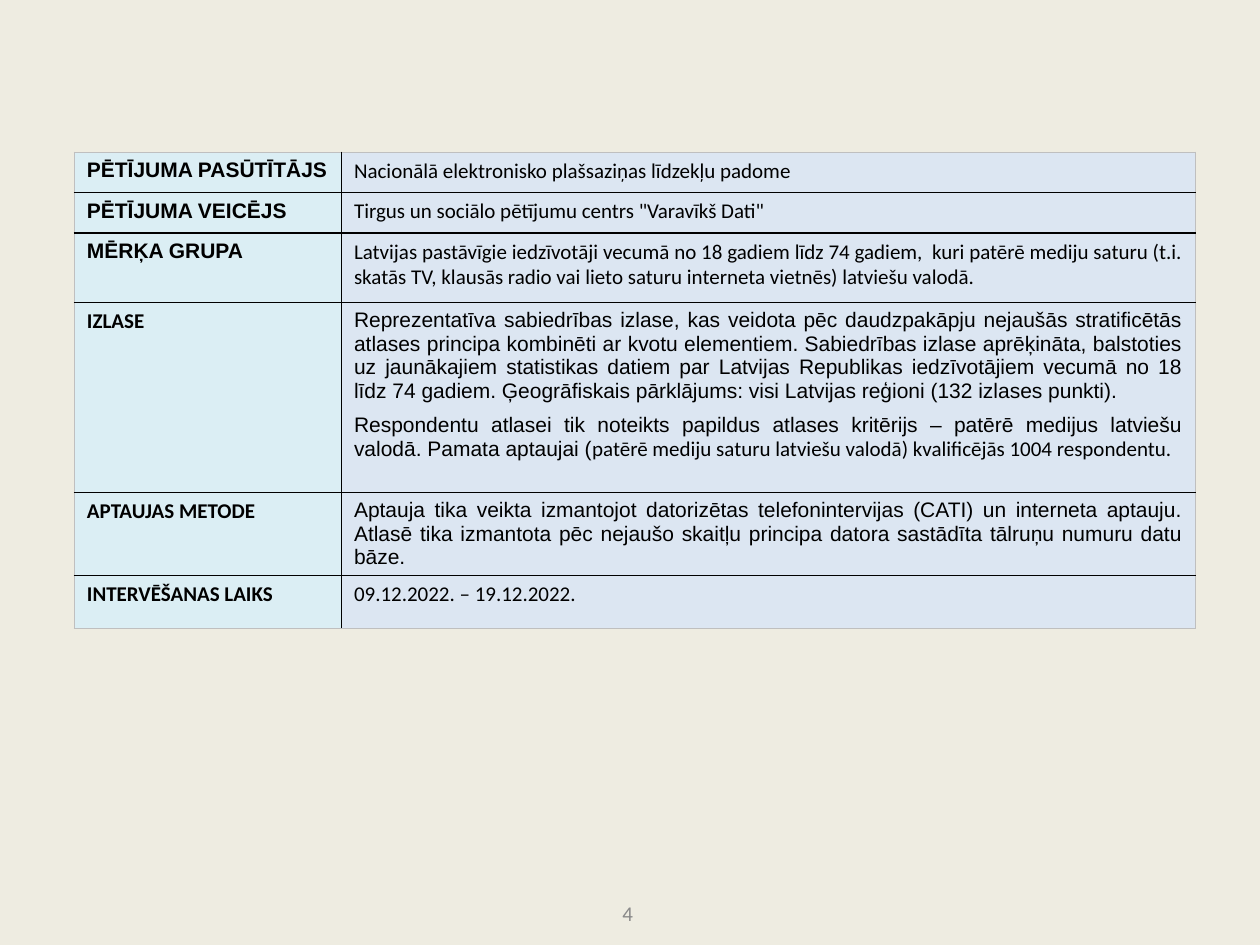
from lxml import etree
from pptx import Presentation
from pptx.dml.color import RGBColor
from pptx.enum.text import PP_ALIGN
from pptx.oxml.ns import qn
from pptx.util import Inches, Pt

LEFT, JUSTIFY = PP_ALIGN.LEFT, PP_ALIGN.JUSTIFY
BACKGROUND = RGBColor(0xEE, 0xEC, 0xE1)
LABEL_FILL = RGBColor(0xDB, 0xEE, 0xF4)
DETAIL_FILL = RGBColor(0xDC, 0xE6, 0xF2)
BLACK = RGBColor(0x00, 0x00, 0x00)
GREY = RGBColor(0x89, 0x89, 0x89)
FRAME = RGBColor(0xBF, 0xBF, 0xBF)
ARIAL, CALIBRI = "Arial", "Calibri"

# Each row: height, label, label font, detail alignment, paragraphs of (text, font) runs
ROWS = [
    (0.32, "PĒTĪJUMA PASŪTĪTĀJS", ARIAL, JUSTIFY,
     [[("Nacionālā elektronisko plašsaziņas līdzekļu padome", CALIBRI)]]),
    (0.32, "PĒTĪJUMA VEICĒJS", ARIAL, JUSTIFY,
     [[('Tirgus un sociālo pētījumu centrs "Varavīkš Dati"', CALIBRI)]]),
    (0.55, "MĒRĶA GRUPA", ARIAL, JUSTIFY,
     [[("Latvijas pastāvīgie iedzīvotāji vecumā no 18 gadiem līdz 74 gadiem,  kuri patērē "
        "mediju saturu (t.i. skatās TV, klausās radio vai lieto saturu interneta vietnēs) "
        "latviešu valodā.", CALIBRI)]]),
    (1.51, "IZLASE", CALIBRI, JUSTIFY,
     [[("Reprezentatīva sabiedrības izlase, kas veidota pēc daudzpakāpju nejaušās "
        "stratificētās atlases principa kombinēti ar kvotu elementiem. Sabiedrības izlase "
        "aprēķināta, balstoties uz jaunākajiem statistikas datiem par Latvijas Republikas "
        "iedzīvotājiem vecumā no 18 līdz 74 gadiem. Ģeogrāfiskais pārklājums: visi Latvijas "
        "reģioni (132 izlases punkti).", ARIAL)],
      [("Respondentu atlasei tik noteikts papildus atlases kritērijs – patērē medijus "
        "latviešu valodā. Pamata aptaujai (", ARIAL),
       ("patērē mediju saturu latviešu valodā) kvalificējās 1004 respondentu.", CALIBRI)]]),
    (0.66, "APTAUJAS METODE", CALIBRI, JUSTIFY,
     [[("Aptauja tika veikta izmantojot datorizētas telefonintervijas (CATI) un interneta "
        "aptauju. Atlasē tika izmantota pēc nejaušo skaitļu principa datora sastādīta "
        "tālruņu numuru datu bāze.", ARIAL)]]),
    (0.42, "INTERVĒŠANAS LAIKS", CALIBRI, LEFT,
     [[("09.12.2022. – 19.12.2022.", CALIBRI)]]),
]
COLUMN_WIDTHS = [2.12, 6.78]
PAGE_NUMBER = "4"


def write_text(text_frame, paragraphs, color=BLACK, bold=False, align=LEFT):
    """Fill a text frame with paragraphs made of (text, font) runs."""
    text_frame.word_wrap = True
    for index, runs in enumerate(paragraphs):
        paragraph = text_frame.add_paragraph() if index else text_frame.paragraphs[0]
        paragraph.alignment = align
        if index:
            paragraph.space_before = Pt(6)
        for text, font_name in runs:
            run = paragraph.add_run()
            run.text = text
            run.font.name = font_name
            run.font.size = Pt(12)
            run.font.bold = bold
            run.font.color.rgb = color


def set_borders(cell, colors):
    """Draw 1 pt borders; colors are given for left, right, top, bottom."""
    properties = cell._tc.get_or_add_tcPr()
    for index, (side, color) in enumerate(zip("LRTB", colors)):
        line = etree.Element(qn(f"a:ln{side}"), w=str(Pt(1)))
        fill = etree.SubElement(line, qn("a:solidFill"))
        etree.SubElement(fill, qn("a:srgbClr"), val=str(color))
        properties.insert(index, line)


def main():
    presentation = Presentation()
    presentation.slide_width, presentation.slide_height = Inches(10), Inches(7.5)
    slide = presentation.slides.add_slide(presentation.slide_layouts[6])
    slide.background.fill.solid()
    slide.background.fill.fore_color.rgb = BACKGROUND

    # Survey facts table
    table = slide.shapes.add_table(
        len(ROWS), 2, Inches(0.59), Inches(1.21),
        Inches(sum(COLUMN_WIDTHS)), Inches(sum(row[0] for row in ROWS))).table
    table.first_row = table.horz_banding = False
    for column, width in zip(table.columns, COLUMN_WIDTHS):
        column.width = Inches(width)

    for row_index, (height, label, label_font, align, details) in enumerate(ROWS):
        table.rows[row_index].height = Inches(height)
        top = BLACK if row_index else FRAME
        bottom = BLACK if row_index < len(ROWS) - 1 else FRAME
        label_cell, detail_cell = table.cell(row_index, 0), table.cell(row_index, 1)
        for cell, fill, sides in ((label_cell, LABEL_FILL, (FRAME, BLACK)),
                                  (detail_cell, DETAIL_FILL, (BLACK, FRAME))):
            cell.fill.solid()
            cell.fill.fore_color.rgb = fill
            set_borders(cell, (*sides, top, bottom))
        write_text(label_cell.text_frame, [[(label, label_font)]], bold=True)
        write_text(detail_cell.text_frame, details, align=align)

    # Page number
    number_box = slide.shapes.add_textbox(Inches(4.84), Inches(7.1), Inches(0.32), Inches(0.4))
    write_text(number_box.text_frame, [[(PAGE_NUMBER, CALIBRI)]], color=GREY)

    presentation.save("out.pptx")


if __name__ == "__main__":
    main()
